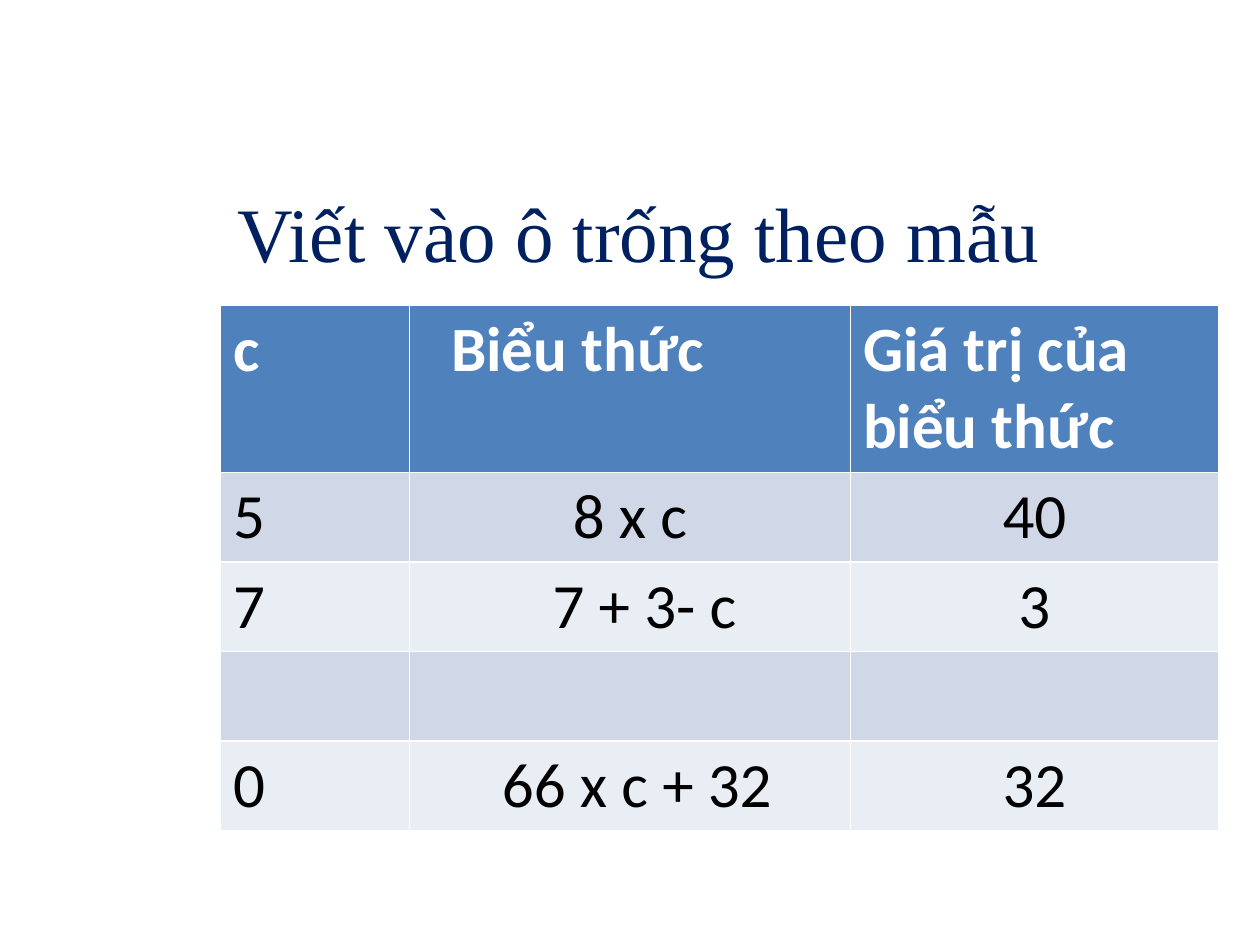
from pptx import Presentation
from pptx.dml.color import RGBColor
from pptx.enum.text import MSO_ANCHOR, PP_ALIGN as Align
from pptx.util import Inches, Pt

COLS = [1.5, 3.5, 2.92]
ROWS = [1.33] + [0.71] * 4
DATA = [
    ["c", "Biểu thức", "Giá trị của biểu thức"],
    ["5", "8 x c", "40"],
    ["7", "7 + 3- c", "3"],
    ["", "", ""],
    ["0", "66 x c + 32", "32"],
]
HEAD = "4F81BD"
BANDS = ["E9EDF4", "D0D8E8"]
# Extra left margin of some cells, by row and column
INDENT = {(0, 1): 0.23, (2, 1): 0.23, (4, 1): 0.11}


def color(code):
    return RGBColor.from_string(code)


def style(para, name, size, code, align, bold=False):
    para.alignment = align
    font = para.font
    font.name, font.size, font.bold = name, Pt(size), bold
    font.color.rgb = color(code)


def add_title(slide, text):
    box = slide.shapes.add_textbox(
        Inches(0.82), Inches(1.34), Inches(8.5), Inches(1))
    frame = box.text_frame
    frame.word_wrap = True
    frame.vertical_anchor = MSO_ANCHOR.MIDDLE
    frame.text = text
    style(frame.paragraphs[0], "Times New Roman", 44, "002060", Align.CENTER)


def fill_cell(cell, text, row, col):
    head = row == 0
    cell.fill.solid()
    cell.fill.fore_color.rgb = color(HEAD if head else BANDS[row % 2])
    cell.margin_left = Inches(0.1 + INDENT.get((row, col), 0))
    cell.text = text
    align = Align.LEFT if head or col == 0 else Align.CENTER
    style(cell.text_frame.paragraphs[0], "Calibri", 36,
          "FFFFFF" if head else "000000", align, head)


def add_grid(slide):
    # The default table style supplies the white borders
    table = slide.shapes.add_table(
        len(ROWS), len(COLS), Inches(1.75), Inches(2.42),
        Inches(sum(COLS)), Inches(sum(ROWS))).table
    for col, width in zip(table.columns, COLS):
        col.width = Inches(width)
    for row, height in zip(table.rows, ROWS):
        row.height = Inches(height)
    for r, line in enumerate(DATA):
        for c, text in enumerate(line):
            fill_cell(table.cell(r, c), text, r, c)


def main():
    prs = Presentation()
    prs.slide_width, prs.slide_height = Inches(10), Inches(7.5)
    slide = prs.slides.add_slide(prs.slide_layouts[6])
    add_title(slide, "Viết vào ô trống theo mẫu")
    add_grid(slide)
    prs.save("out.pptx")


if __name__ == "__main__":
    main()
